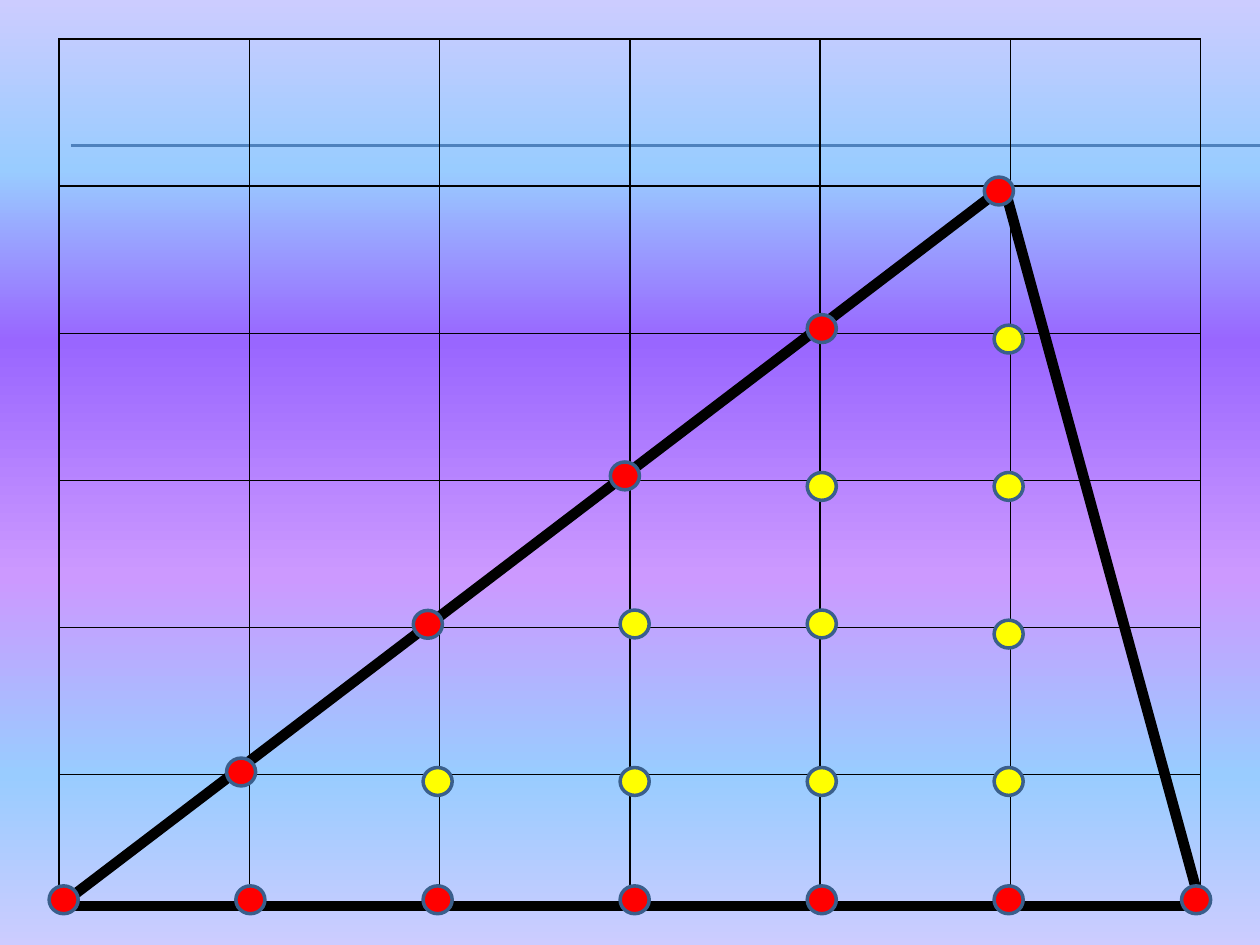
from lxml import etree
from pptx import Presentation
from pptx.dml.color import RGBColor
from pptx.enum.shapes import MSO_CONNECTOR, MSO_SHAPE
from pptx.oxml.ns import qn
from pptx.util import Pt

LINE = MSO_CONNECTOR.STRAIGHT
OVAL = MSO_SHAPE.OVAL

HEX = {"black": "000000", "rule": "4F81BD", "rim": "3A5F8C",
       "red": "FF0000", "yellow": "FFFF00"}
STOPS = [(0, "CCCCFF"), (18, "99CCFF"), (36, "9966FF"),
         (61, "CC99FF"), (82, "99CCFF"), (100, "CCCCFF")]

LEFT, TOP, COL = 33.8, 22.3, 108.73
ROWS = [84.1] * 5 + [75]
RIGHT, BASE = LEFT + 6 * COL, TOP + sum(ROWS)
APEX = (573.8, 106.6)
SIDES = [((LEFT, BASE), (RIGHT, BASE)),
         (APEX, (RIGHT, BASE)),
         (APEX, (LEFT, BASE))]
RULES = [82.8, 83.5]

DOT_W, DOT_H = 16.6, 15.9
X = [28.1, 134.8, 241.8, 354.4, 461.3, 568.1, 675.2]
SLOPE = [(129.5, 433.2), (236.2, 348.8), (348.8, 264), (461.3, 179.8), (562.5, 101.2)]
INNER = [(438.6, [2, 3, 4, 5]), (348.6, [3, 4]), (354.4, [5]),
         (270, [4, 5]), (185.8, [5])]
DOTS = {"red": SLOPE + [(x, 506.2) for x in X],
        "yellow": [(X[i], y) for y, cols in INNER for i in cols]}


def color(name):
    return RGBColor.from_string(HEX[name])


def add_line(slide, start, end, name, width):
    line = slide.shapes.add_connector(LINE, *[Pt(v) for v in start + end])
    line.line.color.rgb = color(name)
    line.line.width = Pt(width)
    etree.SubElement(line.element.spPr, qn("a:effectLst"))


def add_dot(slide, x, y, name):
    dot = slide.shapes.add_shape(OVAL, Pt(x), Pt(y), Pt(DOT_W), Pt(DOT_H))
    dot.shadow.inherit = False
    dot.fill.solid()
    dot.fill.fore_color.rgb = color(name)
    dot.line.color.rgb = color("rim")
    dot.line.width = Pt(2)


def paint(slide):
    fill = slide.background.fill
    fill.gradient()
    fill.gradient_angle = 270
    stops = slide.element.find(".//" + qn("a:gsLst"))
    for stop in list(stops):
        stops.remove(stop)
    for pos, code in STOPS:
        stop = etree.SubElement(stops, qn("a:gs"), pos=str(pos * 1000))
        etree.SubElement(stop, qn("a:srgbClr"), val=code)


def add_grid(slide):
    grid = slide.shapes.add_table(len(ROWS), 6, Pt(LEFT), Pt(TOP),
                                  Pt(6 * COL), Pt(sum(ROWS))).table
    grid.first_row = grid.horz_banding = False
    for col in grid.columns:
        col.width = Pt(COL)
    for row, height in zip(grid.rows, ROWS):
        row.height = Pt(height)
    for cell in grid.iter_cells():
        props = cell._tc.get_or_add_tcPr()
        for side in ("lnL", "lnR", "lnT", "lnB"):
            edge = etree.SubElement(props, qn("a:" + side), w=str(Pt(1)))
            solid = etree.SubElement(edge, qn("a:solidFill"))
            etree.SubElement(solid, qn("a:srgbClr"), val=HEX["black"])
        cell.fill.background()


def main():
    deck = Presentation()
    deck.slide_width, deck.slide_height = Pt(720), Pt(540)
    slide = deck.slides.add_slide(deck.slide_layouts[6])
    paint(slide)
    for y in RULES:
        add_line(slide, (40.5, y), (720, y), "rule", 0.75)
    add_grid(slide)
    for start, end in SIDES:
        add_line(slide, start, end, "black", 6)
    for name, spots in DOTS.items():
        for x, y in spots:
            add_dot(slide, x, y, name)
    deck.save("out.pptx")


if __name__ == "__main__":
    main()
